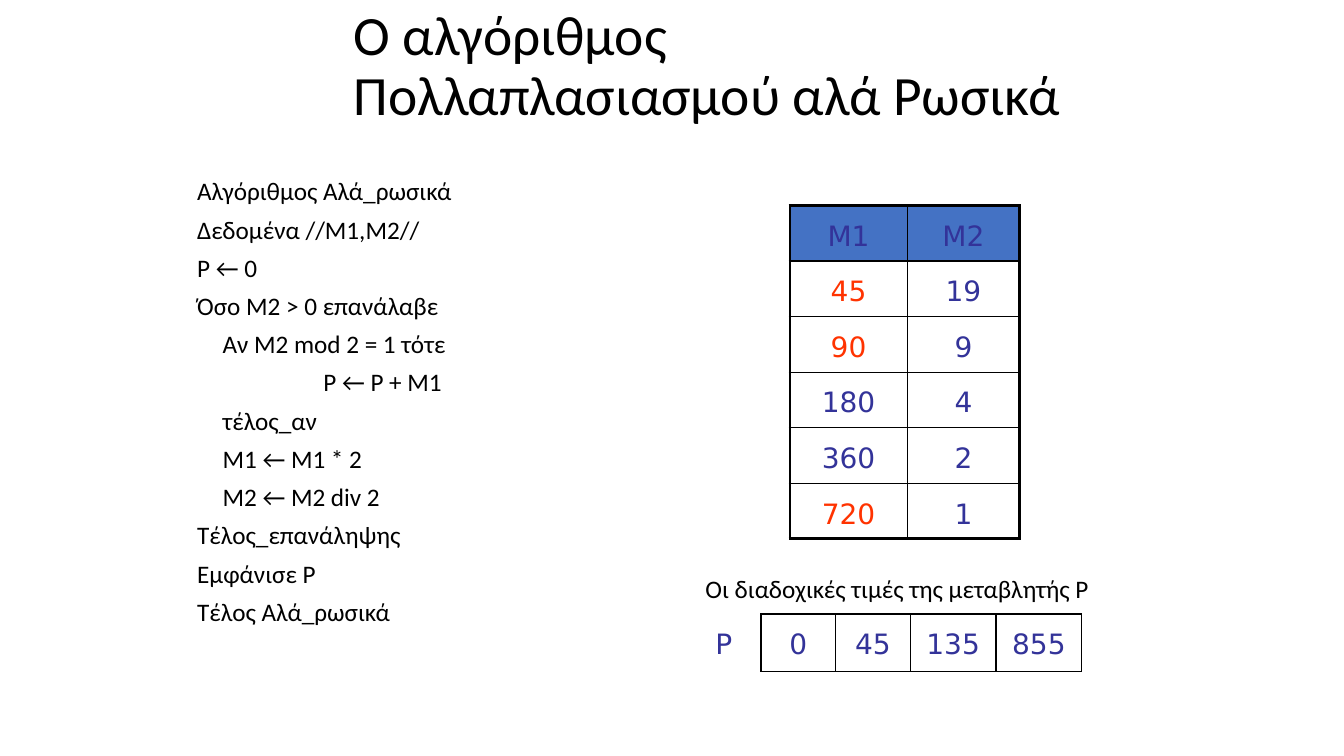
from dataclasses import dataclass, field

from lxml import etree
from pptx import Presentation
from pptx import util as u
from pptx.dml.color import RGBColor
from pptx.enum import text
from pptx.oxml import ns

BLACK = RGBColor(0x00, 0x00, 0x00)
INDIGO = RGBColor(0x33, 0x33, 0x99)
RED = RGBColor(0xFF, 0x33, 0x00)
HEADER_BLUE = RGBColor(0x44, 0x72, 0xC4)
BODY_FONT = "Calibri"
TABLE_FONT = "DejaVu Sans"
THIN, THICK = 1, 2.25


@dataclass
class Box:
    left: float
    top: float
    width: float
    height: float

    def lengths(self) -> list[u.Cm]:
        return [u.Cm(n) for n in (self.left, self.top, self.width, self.height)]


@dataclass
class CodeLine:
    words: str
    indent: float = 0


@dataclass
class Entry:
    words: str
    color: RGBColor = INDIGO
    fill: RGBColor | None = None
    borders: dict[str, float] = field(default_factory=lambda: dict.fromkeys("LRTB", THIN))


INNER, DEEP = 0.64, 3.18
ALGORITHM = [
    CodeLine("Αλγόριθμος Αλά_ρωσικά"),
    CodeLine("Δεδομένα //Μ1,Μ2//"),
    CodeLine("P ← 0"),
    CodeLine("Όσο Μ2 > 0 επανάλαβε"),
    CodeLine("Αν Μ2 mod 2 = 1 τότε", INNER),
    CodeLine("P ← P + M1", DEEP),
    CodeLine("τέλος_αν", INNER),
    CodeLine("Μ1 ← Μ1 * 2", INNER),
    CodeLine("Μ2 ← Μ2 div 2", INNER),
    CodeLine("Τέλος_επανάληψης"),
    CodeLine("Εμφάνισε P"),
    CodeLine("Τέλος Αλά_ρωσικά"),
]


def style(para, font_name: str, size: float, color: RGBColor) -> None:
    para.font.name = font_name
    para.font.size = u.Pt(size)
    para.font.color.rgb = color


def add_title(page, words: str, box: Box) -> None:
    title = page.shapes.title
    title.left, title.top, title.width, title.height = box.lengths()
    frame = title.text_frame
    frame.text = words
    frame.auto_size = text.MSO_AUTO_SIZE.NONE
    frame.vertical_anchor = text.MSO_ANCHOR.MIDDLE
    para = frame.paragraphs[0]
    para.alignment = text.PP_ALIGN.LEFT
    para.line_spacing = 0.9
    style(para, BODY_FONT, 39.6, BLACK)


def add_lines(page, lines: list[CodeLine], box: Box, line_spacing: float = 1.0) -> None:
    frame = page.shapes.add_textbox(*box.lengths()).text_frame
    frame.word_wrap = True
    for number, line in enumerate(lines):
        para = frame.add_paragraph() if number else frame.paragraphs[0]
        para.text = line.words
        para.line_spacing = line_spacing
        para.space_before = u.Pt(10 if number else 0)
        if line.indent:
            para._p.get_or_add_pPr().set("marL", str(u.Cm(line.indent)))
        style(para, BODY_FONT, 18, BLACK)


def set_borders(cell, borders: dict[str, float]) -> None:
    """Draw the given sides in black and leave the other sides without a line."""
    properties = cell._tc.get_or_add_tcPr()
    for place, side in enumerate("LRTB"):
        line = etree.Element(ns.qn(f"a:ln{side}"))
        properties.insert(place, line)
        if side in borders:
            line.set("w", str(u.Pt(borders[side])))
            fill = etree.SubElement(line, ns.qn("a:solidFill"))
            etree.SubElement(fill, ns.qn("a:srgbClr"), val=str(BLACK))
        else:
            etree.SubElement(line, ns.qn("a:noFill"))


def fill_cell(cell, entry: Entry) -> None:
    cell.text = entry.words
    para = cell.text_frame.paragraphs[0]
    para.alignment = text.PP_ALIGN.CENTER
    para.line_spacing = 1.3
    style(para, TABLE_FONT, 20, entry.color)
    if entry.fill is None:
        cell.fill.background()
    else:
        cell.fill.solid()
        cell.fill.fore_color.rgb = entry.fill
    set_borders(cell, entry.borders)


def add_grid(page, rows: list[list[Entry]], left: float, top: float,
             widths: list[float], row_height: float) -> None:
    box = Box(left, top, sum(widths), row_height * len(rows))
    table = page.shapes.add_table(len(rows), len(widths), *box.lengths()).table
    table.first_row = table.horz_banding = False
    for column, width in zip(table.columns, widths):
        column.width = u.Cm(width)
    for row, entries in zip(table.rows, rows):
        row.height = u.Cm(row_height)
        for cell, entry in zip(row.cells, entries):
            fill_cell(cell, entry)


def multiply(m1: int, m2: int) -> tuple[list[list[Entry]], list[int]]:
    """Give the rows of factors, with each added M1 in red, and the values of P."""
    rows, products = [], [0]
    while m2 > 0:
        is_added = m2 % 2 == 1
        if is_added:
            products.append(products[-1] + m1)
        rows.append([Entry(str(m1), RED if is_added else INDIGO), Entry(str(m2))])
        m1, m2 = m1 * 2, m2 // 2
    return rows, products


def frame_thickly(rows: list[list[Entry]]) -> None:
    for row in rows:
        row[0].borders["L"] = row[-1].borders["R"] = THICK
    for entry in rows[0]:
        entry.borders["T"] = THICK
    for entry in rows[-1]:
        entry.borders["B"] = THICK


def main() -> None:
    deck = Presentation()
    deck.slide_width, deck.slide_height = u.Cm(33.87), u.Cm(19.05)
    page = deck.slides.add_slide(deck.slide_layouts.get_by_name("Title Only"))

    add_title(page, "Ο αλγόριθμος \vΠολλαπλασιασμού αλά Ρωσικά", Box(8.66, 0.71, 24, 2))
    add_lines(page, ALGORITHM, Box(4.72, 4.45, 12.4, 12.57), line_spacing=0.8)

    factors, products = multiply(45, 19)
    header = [Entry(name, fill=HEADER_BLUE) for name in ("Μ1", "Μ2")]
    rows = [header, *factors]
    frame_thickly(rows)
    add_grid(page, rows, 19.91, 5.18, [2.95, 2.84], 1.4)

    label = Entry("P", borders={"R": THIN})
    values = [label, *(Entry(str(product)) for product in products)]
    add_grid(page, [values], 17.3, 15.47, [1.88] * 3 + [2.16] * 2, 1.45)

    caption = CodeLine("Οι διαδοχικές τιμές της μεταβλητής P")
    add_lines(page, [caption], Box(17.53, 14.33, 11.4, 1.02))
    deck.save("out.pptx")


if __name__ == "__main__":
    main()
